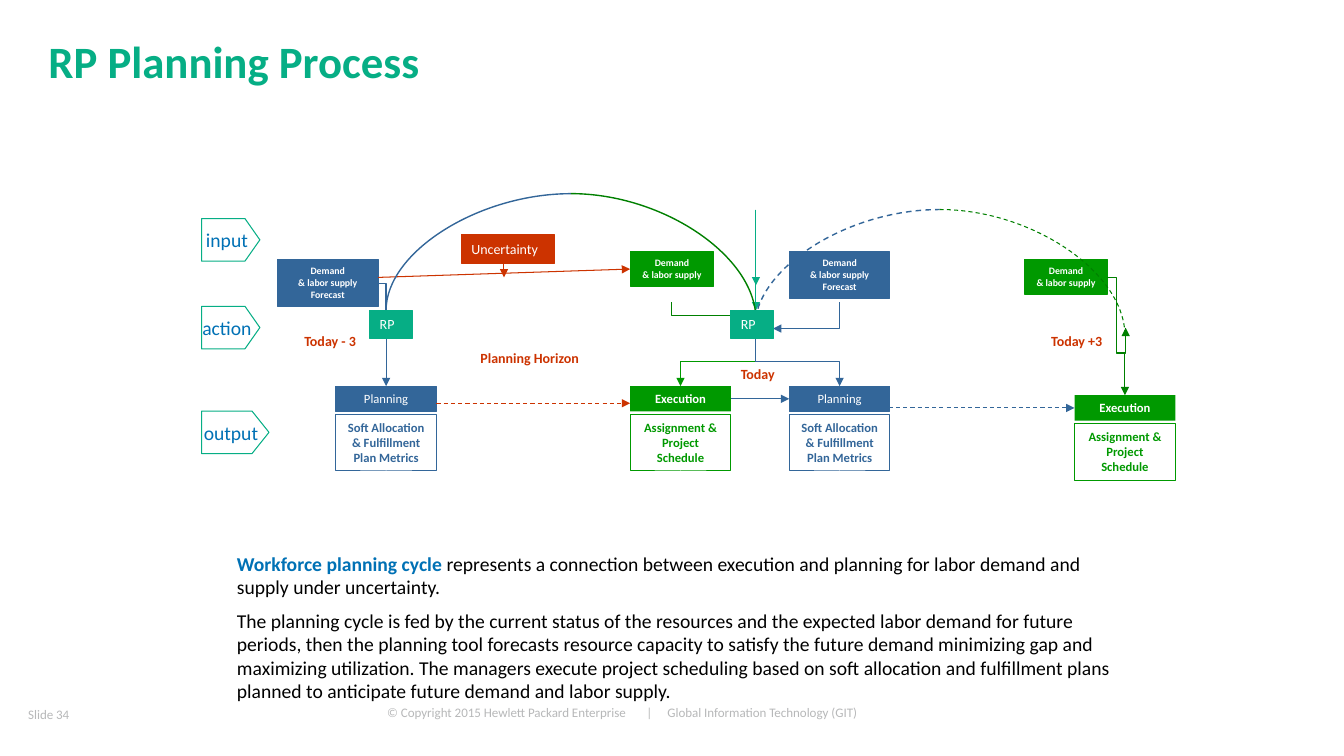
"""Builds the RP Planning Process slide."""
import lxml.etree
import pptx
import pptx.dml.color
import pptx.enum.dml
import pptx.enum.shapes
import pptx.enum.text
import pptx.oxml.ns
import pptx.util
from dataclasses import dataclass

Cm = pptx.util.Cm
SHAPE = pptx.enum.shapes.MSO_SHAPE
CONNECTOR = pptx.enum.shapes.MSO_CONNECTOR
ALIGN = pptx.enum.text.PP_ALIGN
ANCHOR = pptx.enum.text.MSO_ANCHOR


@dataclass(frozen=True)
class Theme:
    font: str = "Calibri"
    teal: str = "06AE85"
    sky: str = "0071B5"
    blue: str = "336699"
    green: str = "009900"
    dark_green: str = "008000"
    red: str = "CC3300"
    grey: str = "B7B8B9"
    black: str = "000000"
    white: str = "FFFFFF"
    title: float = 32
    body: float = 14
    label: float = 10
    box: float = 9
    small: float = 7
    footer: float = 9.3


THEME = Theme()

TITLE = "RP Planning Process"
BODY = [
    [("Workforce planning cycle", THEME.sky, True),
     (" represents a connection between execution and planning for labor demand and supply under uncertainty.",
      THEME.black, False)],
    [("The planning cycle is fed by the current status of the resources and the expected labor demand for future "
      "periods, then the planning tool forecasts resource capacity to satisfy the future demand minimizing gap and "
      "maximizing utilization. The managers execute project scheduling based on soft allocation and fulfillment "
      "plans planned to anticipate future demand and labor supply.", THEME.black, False)],
]
COPYRIGHT = "© Copyright 2015 Hewlett Packard Enterprise\t|\tGlobal Information Technology (GIT)"
COPYRIGHT_TABS = (6.53, 7.06)
SLIDE_NUMBER = "Slide 34"

PLANNING = ("Planning", "Soft Allocation & Fulfillment Plan Metrics", THEME.blue, False)
EXECUTION = ("Execution", "Assignment & Project Schedule", THEME.green, True)
STAGES = {
    "past planning": (8.46, 9.73, PLANNING),
    "current execution": (15.88, 9.73, EXECUTION),
    "current planning": (19.89, 9.73, PLANNING),
    "future execution": (27.08, 9.96, EXECUTION),
}
FORECAST = ("Demand\n& labor supply\nForecast", 2.54, 1.17, THEME.blue)
SUPPLY = ("Demand\n& labor supply", 2.11, 0.86, THEME.green)
DEMANDS = {
    "past forecast": (6.99, 6.55, FORECAST),
    "current supply": (15.88, 6.35, SUPPLY),
    "current forecast": (19.89, 6.35, FORECAST),
    "future supply": (25.81, 6.55, SUPPLY),
}
ROWS = [("input", 5.51, 1.47, 0.35), ("action", 7.72, 1.47, 0.35), ("output", 10.36, 1.7, 0.4)]
TIME_LABELS = [
    ("Today", 18.42, 9.07, 2.11), ("Today +3", 26.24, 8.26, 2.54),
    ("Today - 3", 7.42, 8.26, 2.11), ("Planning Horizon", 11.86, 8.69, 3.61),
]
RP_LEFTS = (9.32, 18.42)

STRAIGHT = [
    ((11, 10.16), (15.88, 10.16), THEME.red, True, True, None, None),
    ((9.53, 6.99), (15.88, 6.78), THEME.red, False, True, None, ("current supply", 1)),
    ((12.7, 6.63), (12.7, 6.99), THEME.red, False, True, None, None),
    ((9.73, 8.47), (9.73, 9.73), THEME.blue, False, True, None, ("past planning", 0)),
    ((18.42, 10.05), (19.89, 10.05), THEME.blue, False, True, ("current execution", 3), ("current planning", 1)),
    ((28.37, 8.26), (28.37, 8.69), THEME.black, False, False, None, None),
    ((28.35, 8.89), (28.35, 9.96), THEME.dark_green, False, True, None, ("future execution", 0)),
    ((22.4, 10.28), (27.08, 10.28), THEME.blue, True, True, None, ("future execution", 1)),
    ((19.05, 5.28), (19.05, 7.19), THEME.teal, False, True, None, None),
    ((19.05, 5.28), (19.05, 7.82), THEME.teal, False, True, None, None),
]
TURNING = [
    ("bentConnector3", (19.05, 8.47), (17.15, 9.73), 90, False, THEME.green, 0.75, False, True, (50000,)),
    ("bentConnector2", (16.93, 7.62), (19.05, 7.94), 270, True, THEME.dark_green, 0.75, False, True, ()),
    ("bentConnector3", (19.05, 8.47), (21.16, 9.73), 270, True, THEME.blue, 0.75, False, True, (50000,)),
    ("bentConnector2", (9.53, 7.14), (9.73, 8.05), 0, False, THEME.blue, 1, False, True, ()),
    ("bentConnector4", (27.91, 6.99), (28.37, 8.26), 0, False, THEME.dark_green, 1, False, True, (50000, 150200)),
    ("bentConnector2", (21.16, 7.62), (19.48, 8.28), 90, False, THEME.blue, 0.75, False, True, ()),
    ("curvedConnector2", (9.73, 7.82), (14.39, 4.88), 270, False, THEME.blue, 1, False, False, ()),
    ("curvedConnector2", (14.39, 4.88), (19.05, 8.05), 0, False, THEME.dark_green, 1, False, False, ()),
    ("curvedConnector2", (19.02, 8.26), (23.68, 5.28), 270, False, THEME.blue, 1, True, False, ()),
    ("curvedConnector2", (23.68, 5.28), (28.35, 8.46), 0, False, THEME.dark_green, 0.75, True, False, ()),
]


def rgb(color):
    return pptx.dml.color.RGBColor.from_string(color)


def add_element(parent, tag, **attributes):
    return lxml.etree.SubElement(parent, pptx.oxml.ns.qn(tag), attributes)


def write(shape, text, size=THEME.label, color=THEME.white, bold=False, align=ALIGN.LEFT, anchor=ANCHOR.TOP,
          wrap=True, margins=(0.25, 0.13, 0.25, 0.13), space=0, tabs=()):
    frame = shape.text_frame
    frame.word_wrap = wrap
    frame.vertical_anchor = anchor
    frame.margin_left, frame.margin_top, frame.margin_right, frame.margin_bottom = map(Cm, margins)
    paragraphs = [[(text, color, bold)]] if isinstance(text, str) else text
    for number, runs in enumerate(paragraphs):
        paragraph = frame.add_paragraph() if number else frame.paragraphs[0]
        paragraph.alignment = align
        paragraph.space_before = pptx.util.Pt(space if number else 0)
        if tabs:
            tab_list = add_element(paragraph._p.get_or_add_pPr(), "a:tabLst")
            for position in tabs:
                add_element(tab_list, "a:tab", pos=str(Cm(position)), algn="l")
        for words, run_color, run_bold in runs:
            for line_number, line in enumerate(words.split("\n")):
                if line_number:
                    paragraph.add_line_break()
                run = paragraph.add_run()
                run.text = line
                run.font.name = THEME.font
                run.font.size = pptx.util.Pt(size)
                run.font.bold = run_bold
                run.font.color.rgb = rgb(run_color)


def add_box(slide, frame, text, fill=None, line=None, kind=SHAPE.RECTANGLE, **style):
    shape = slide.shapes.add_shape(kind, *map(Cm, frame))
    shape.shadow.inherit = False
    if fill:
        shape.fill.solid()
        shape.fill.fore_color.rgb = rgb(fill)
    else:
        shape.fill.background()
    if line:
        shape.line.color.rgb = rgb(line)
        shape.line.width = pptx.util.Pt(0.75)
    else:
        shape.line.fill.background()
    write(shape, text, **style)
    return shape


def add_text(slide, frame, text, **style):
    write(slide.shapes.add_textbox(*map(Cm, frame)), text, **style)


def add_line(slide, start, end, color, width, dashed, arrow):
    connector = slide.shapes.add_connector(CONNECTOR.STRAIGHT, *map(Cm, start + end))
    connector.line.color.rgb = rgb(color)
    connector.line.width = pptx.util.Pt(width)
    if dashed:
        connector.line.dash_style = pptx.enum.dml.MSO_LINE.DASH
    if arrow:
        add_element(connector.line._get_or_add_ln(), "a:tailEnd", type="triangle")
    add_element(connector._element.spPr, "a:effectLst")
    return connector


def add_turning_line(slide, preset, start, end, rotation, flip, color, width, dashed, arrow, adjustments):
    across, down = abs(end[0] - start[0]), abs(end[1] - start[1])
    if rotation in (90, 270):
        across, down = down, across
    left = (start[0] + end[0] - across) / 2
    top = (start[1] + end[1] - down) / 2
    connector = add_line(slide, (left, top), (left + across, top + down), color, width, dashed, arrow)
    properties = connector._element.spPr
    transform = properties.find(pptx.oxml.ns.qn("a:xfrm"))
    transform.set("rot", str(rotation * 60000))
    if flip:
        transform.set("flipH", "1")
    geometry = properties.find(pptx.oxml.ns.qn("a:prstGeom"))
    geometry.set("prst", preset)
    guides = geometry.find(pptx.oxml.ns.qn("a:avLst"))
    for number, value in enumerate(adjustments, 1):
        add_element(guides, "a:gd", name=f"adj{number}", fmla=f"val {value}")


def main():
    presentation = pptx.Presentation()
    presentation.slide_width, presentation.slide_height = Cm(33.87), Cm(19.05)
    slide = presentation.slides.add_slide(presentation.slide_layouts[5])
    title = slide.shapes.title
    title.left, title.top, title.width, title.height = map(Cm, (1.22, 0.86, 30.07, 1.6))
    write(title, TITLE, size=THEME.title, color=THEME.teal, bold=True, margins=(0, 0, 0, 0))
    add_text(slide, (6.81, 17.63, 17.73, 0.84), COPYRIGHT, size=THEME.footer, color=THEME.grey,
             margins=(2.95, 0.13, 0, 0.13), tabs=COPYRIGHT_TABS)
    add_text(slide, (0.71, 17.73, 1.19, 0.56), SLIDE_NUMBER, size=THEME.footer, color=THEME.grey,
             anchor=ANCHOR.MIDDLE, wrap=False, margins=(0, 0, 0, 0))
    add_text(slide, (5.72, 13.77, 22.86, 4.14), BODY, size=THEME.body, space=7)

    boxes = {}
    for key, (left, top, (name, detail, color, bold)) in STAGES.items():
        boxes[key] = add_box(slide, (left, top, 2.54, 0.64), name, fill=color, size=THEME.box, bold=bold,
                             line=None if bold else color, align=ALIGN.CENTER, anchor=ANCHOR.MIDDLE, wrap=False)
        add_box(slide, (left, top + 0.72, 2.54, 1.42), detail, line=color, size=THEME.box, color=color,
                bold=True, align=ALIGN.CENTER)
    for key, (left, top, (text, width, height, color)) in DEMANDS.items():
        boxes[key] = add_box(slide, (left, top, width, height), text, fill=color, line=color, size=THEME.small,
                             bold=True, align=ALIGN.CENTER)
    add_box(slide, (11.63, 5.92, 2.34, 0.71), "Uncertainty", fill=THEME.red, line=THEME.red)
    for start, end, color, dashed, arrow, begin_join, end_join in STRAIGHT:
        connector = add_line(slide, start, end, color, 0.75, dashed, arrow)
        if begin_join:
            connector.begin_connect(boxes[begin_join[0]], begin_join[1])
        if end_join:
            connector.end_connect(boxes[end_join[0]], end_join[1])
    for turning_line in TURNING:
        add_turning_line(slide, *turning_line)
    for text, left, top, width in TIME_LABELS:
        add_text(slide, (left, top, width, 0.69), text, color=THEME.red, bold=True)
    for text, top, width, point in ROWS:
        arrow = add_box(slide, (5.08, top, width, 1.07), text, line=THEME.teal, kind=SHAPE.PENTAGON, size=THEME.body,
                        color=THEME.sky, align=ALIGN.CENTER, anchor=ANCHOR.MIDDLE, wrap=False)
        arrow.adjustments[0] = point
    for left in RP_LEFTS:
        add_box(slide, (left, 7.82, 1.07, 0.71), "RP", fill=THEME.teal, line=THEME.teal)
    presentation.save("out.pptx")


if __name__ == "__main__":
    main()
